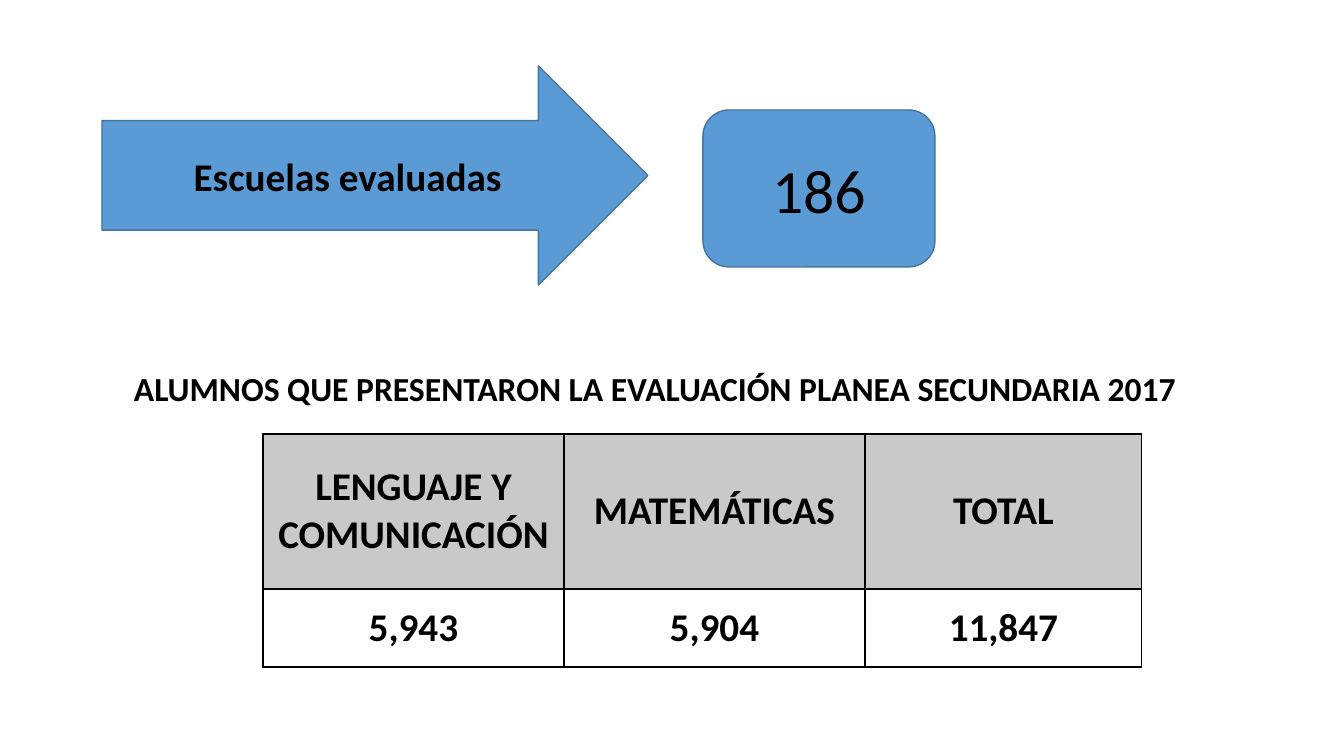
from lxml import etree
from pptx import Presentation
from pptx import util as u
from pptx.dml.color import RGBColor
from pptx.enum import shapes, text
from pptx.oxml.ns import qn

PX = 914400 / 100.8
FONT = "Calibri"
BLACK = RGBColor(0x00, 0x00, 0x00)
BLUE = RGBColor(0x5B, 0x9B, 0xD5)
DARK_BLUE = RGBColor(0x43, 0x73, 0x9E)
GREY = RGBColor(0xC9, 0xC9, 0xC9)

SLIDE_SIZE = (1344, 756)
# preset, box, wording, size in points, bold
SCHOOLS = [
    (shapes.MSO_SHAPE.RIGHT_ARROW, (102, 66, 546, 219), "Escuelas evaluadas", 28, True),
    (shapes.MSO_SHAPE.ROUNDED_RECTANGLE, (703, 110, 232, 157), "186", 44, False),
]
CAPTION = "ALUMNOS QUE PRESENTARON LA EVALUACIÓN PLANEA SECUNDARIA 2017"
CAPTION_BOX = (124, 321, 1084, 92)
STUDENTS = [
    ("LENGUAJE Y COMUNICACIÓN", "MATEMÁTICAS", "TOTAL"),
    ("5,943", "5,904", "11,847"),
]
TABLE_CORNER = (263, 434)
COLUMN_WIDTHS = (301, 301, 277)
ROW_HEIGHTS = (155, 78)


def px(*lengths):
    return [u.Emu(round(length * PX)) for length in lengths]


def write(frame, wording, size, bold=True, align=text.PP_ALIGN.CENTER):
    frame.text = wording
    paragraph = frame.paragraphs[0]
    paragraph.alignment = align
    font = paragraph.runs[0].font
    font.name, font.size, font.bold = FONT, u.Pt(size), bold
    font.color.rgb = BLACK


def add_borders(cell):
    """Rule all four sides of a cell; call before setting its fill."""
    properties = cell._tc.get_or_add_tcPr()
    for side in ("a:lnL", "a:lnR", "a:lnT", "a:lnB"):
        line = etree.SubElement(properties, qn(side), w=str(u.Pt(1)))
        solid = etree.SubElement(line, qn("a:solidFill"))
        etree.SubElement(solid, qn("a:srgbClr"), val=str(BLACK))


def add_schools(slide):
    for preset, box, wording, size, bold in SCHOOLS:
        block = slide.shapes.add_shape(preset, *px(*box))
        block.shadow.inherit = False
        block.fill.solid()
        block.fill.fore_color.rgb = BLUE
        block.line.color.rgb = DARK_BLUE
        block.line.width = u.Pt(1)
        block.text_frame.vertical_anchor = text.MSO_ANCHOR.MIDDLE
        write(block.text_frame, wording, size, bold)


def add_caption(slide):
    frame = slide.shapes.add_textbox(*px(*CAPTION_BOX)).text_frame
    frame.word_wrap = True
    frame.vertical_anchor = text.MSO_ANCHOR.BOTTOM
    write(frame, CAPTION, 24, align=text.PP_ALIGN.LEFT)


def add_students(slide):
    box = px(*TABLE_CORNER, sum(COLUMN_WIDTHS), sum(ROW_HEIGHTS))
    table = slide.shapes.add_table(len(STUDENTS), len(COLUMN_WIDTHS), *box).table
    for column, width in zip(table.columns, px(*COLUMN_WIDTHS)):
        column.width = width
    for row, height in zip(table.rows, px(*ROW_HEIGHTS)):
        row.height = height
    for r, values in enumerate(STUDENTS):
        for c, value in enumerate(values):
            cell = table.cell(r, c)
            cell.vertical_anchor = text.MSO_ANCHOR.MIDDLE
            write(cell.text_frame, value, 28)
            add_borders(cell)
            if r == 0:
                cell.fill.solid()
                cell.fill.fore_color.rgb = GREY
            else:
                cell.fill.background()


def main():
    deck = Presentation()
    deck.slide_width, deck.slide_height = px(*SLIDE_SIZE)
    slide = deck.slides.add_slide(deck.slide_layouts[6])
    add_students(slide)
    add_caption(slide)
    add_schools(slide)
    deck.save("out.pptx")


if __name__ == "__main__":
    main()
